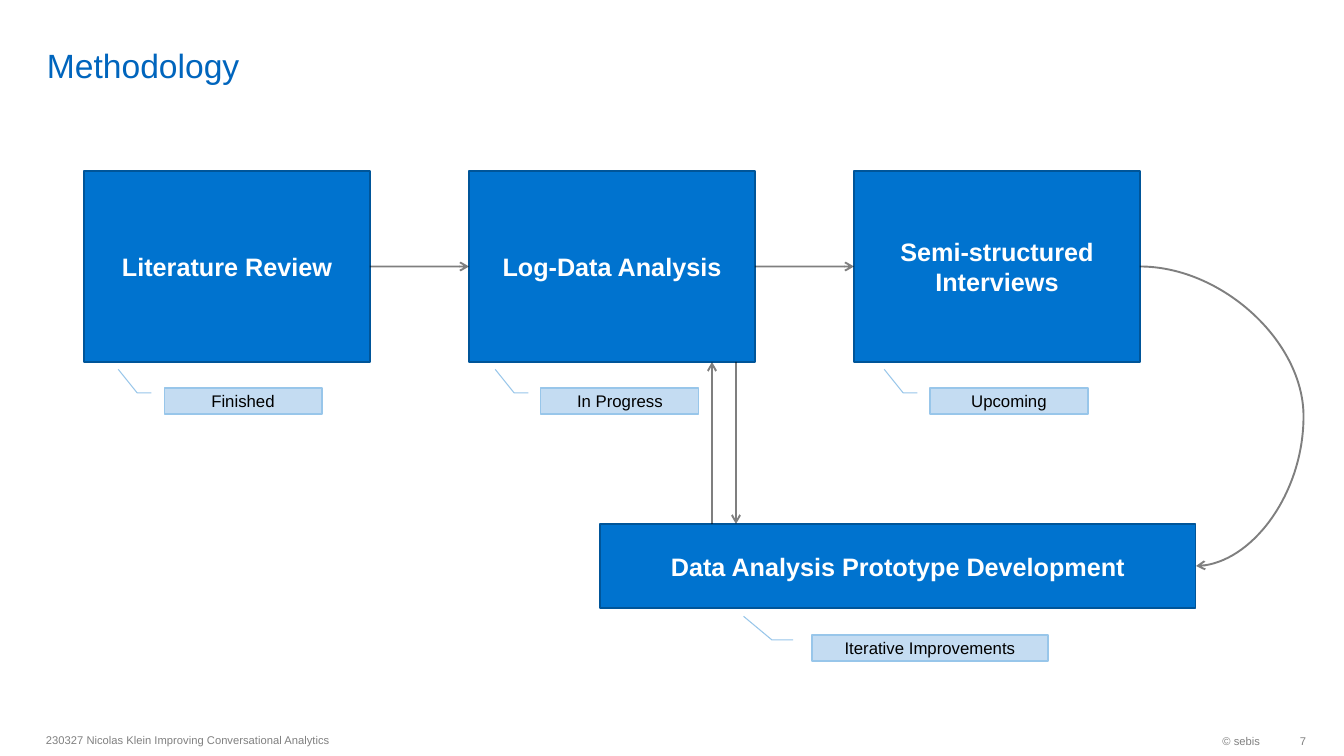
from lxml import etree
from pptx import Presentation
from pptx.dml.color import RGBColor
from pptx.enum.shapes import MSO_CONNECTOR, MSO_SHAPE
from pptx.enum.text import MSO_ANCHOR, PP_ALIGN
from pptx.oxml.ns import qn
from pptx.util import Pt

STRAIGHT, CURVE = MSO_CONNECTOR.STRAIGHT, MSO_CONNECTOR.CURVE
RECTANGLE, CALLOUT = MSO_SHAPE.RECTANGLE, MSO_SHAPE.LINE_CALLOUT_2
LEFT, CENTER, RIGHT = PP_ALIGN.LEFT, PP_ALIGN.CENTER, PP_ALIGN.RIGHT
MIDDLE, BOTTOM = MSO_ANCHOR.MIDDLE, MSO_ANCHOR.BOTTOM
RIGHT_SIDE, LEFT_SIDE = 3, 1

COLORS = {
    "title": "0065BD", "footer": "808080", "white": "FFFFFF", "black": "000000",
    "box": "0073CF", "box_line": "005599",
    "callout": "C4DCF2", "callout_line": "98C6EA",
}
TITLE = ("Methodology", (37, 5, 1167, 80))
FOOTERS = [
    ("230327 Nicolas Klein Improving Conversational Analytics", (36, 724, 635, 32), LEFT),
    ("© sebis", (1034, 725, 236, 32), RIGHT),
    ("7", (1270, 725, 36, 32), RIGHT),
]
STEPS = ["Literature Review", "Log-Data Analysis", "Semi-structured Interviews"]
STEP_LEFT, STEP_TOP, STEP_WIDTH, STEP_HEIGHT, STEP_PITCH = 84, 171, 286, 191, 385
PROTOTYPE = ("Data Analysis Prototype Development", (600, 524, 596, 84))
STATUSES = [
    ("Finished", (164, 388, 158, 26)),
    ("In Progress", (541, 388, 158, 26)),
    ("Upcoming", (930, 388, 158, 26)),
    ("Iterative Improvements", (812, 635, 236, 26)),
]
CALLOUT_POINTS = (0.19, -0.08, 0.19, -0.17, -0.72, -0.29)
UP_ARROW_X, DOWN_ARROW_X = 712, 736
CURVE_BULGE = 292100


def px(*lengths):
    return [round(length * 914400 / 100.8) for length in lengths]


def color(name):
    return RGBColor.from_string(COLORS[name])


def write(shape, text, size, color_name, align, anchor=MIDDLE, bold=False):
    frame = shape.text_frame
    frame.text = text
    frame.word_wrap = True
    frame.vertical_anchor = anchor
    paragraph = frame.paragraphs[0]
    paragraph.alignment = align
    font = paragraph.runs[0].font
    font.name, font.size, font.bold = "Arial", Pt(size), bold
    font.color.rgb = color(color_name)


def add_label(kind, text, area, fill, line_width, size, text_color, bold=False):
    shape = slide.shapes.add_shape(kind, *px(*area))
    shape.shadow.inherit = False
    shape.fill.solid()
    shape.fill.fore_color.rgb = color(fill)
    shape.line.color.rgb = color(fill + "_line")
    shape.line.width = Pt(line_width)
    write(shape, text, size, text_color, CENTER, bold=bold)
    return shape


def add_box(text, area):
    return add_label(RECTANGLE, text, area, "box", 0.85, 18, "white", True)


def add_arrow(kind, start=(0, 0), end=(0, 0)):
    arrow = slide.shapes.add_connector(kind, *px(*start, *end))
    arrow.line.width = Pt(1.35)
    arrow.line.color.rgb = color("black")
    properties = arrow._element.spPr
    line = properties.find(qn("a:ln"))
    etree.SubElement(line.find(".//" + qn("a:srgbClr")), qn("a:alpha"), val="50000")
    etree.SubElement(line, qn("a:tailEnd"), type="arrow")
    etree.SubElement(properties, qn("a:effectLst"))
    return arrow


def join(arrow, source, target, target_side):
    arrow.begin_connect(source, RIGHT_SIDE)
    arrow.end_connect(target, target_side)


presentation = Presentation()
presentation.slide_width, presentation.slide_height = px(1344, 756)
slide = presentation.slides.add_slide(presentation.slide_layouts[6])

title_text, title_area = TITLE
title = slide.shapes.add_textbox(*px(*title_area))
write(title, title_text, 24, "title", LEFT, BOTTOM)
title.text_frame.margin_top = title.text_frame.margin_bottom = 0

for text, area, align in FOOTERS:
    footer = slide.shapes.add_textbox(*px(*area))
    write(footer, text, 8, "footer", align)
footer.text_frame.margin_right = 0

steps = [
    add_box(text, (STEP_LEFT + i * STEP_PITCH, STEP_TOP, STEP_WIDTH, STEP_HEIGHT))
    for i, text in enumerate(STEPS)
]
prototype = add_box(*PROTOTYPE)

for source, target in zip(steps, steps[1:]):
    join(add_arrow(STRAIGHT), source, target, LEFT_SIDE)

feedback = add_arrow(CURVE)
join(feedback, steps[-1], prototype, RIGHT_SIDE)
geometry = feedback._element.spPr.find(qn("a:prstGeom"))
etree.SubElement(geometry.find(qn("a:avLst")), qn("a:gd"),
                 name="adj1", fmla=f"val {CURVE_BULGE}")

step_bottom, prototype_top = STEP_TOP + STEP_HEIGHT, PROTOTYPE[1][1]
add_arrow(STRAIGHT, (UP_ARROW_X, prototype_top), (UP_ARROW_X, step_bottom))
add_arrow(STRAIGHT, (DOWN_ARROW_X, step_bottom), (DOWN_ARROW_X, prototype_top))

for text, area in STATUSES:
    callout = add_label(CALLOUT, text, area, "callout", 0.75, 12, "black")
    for i, point in enumerate(CALLOUT_POINTS):
        callout.adjustments[i] = point

presentation.save("out.pptx")
